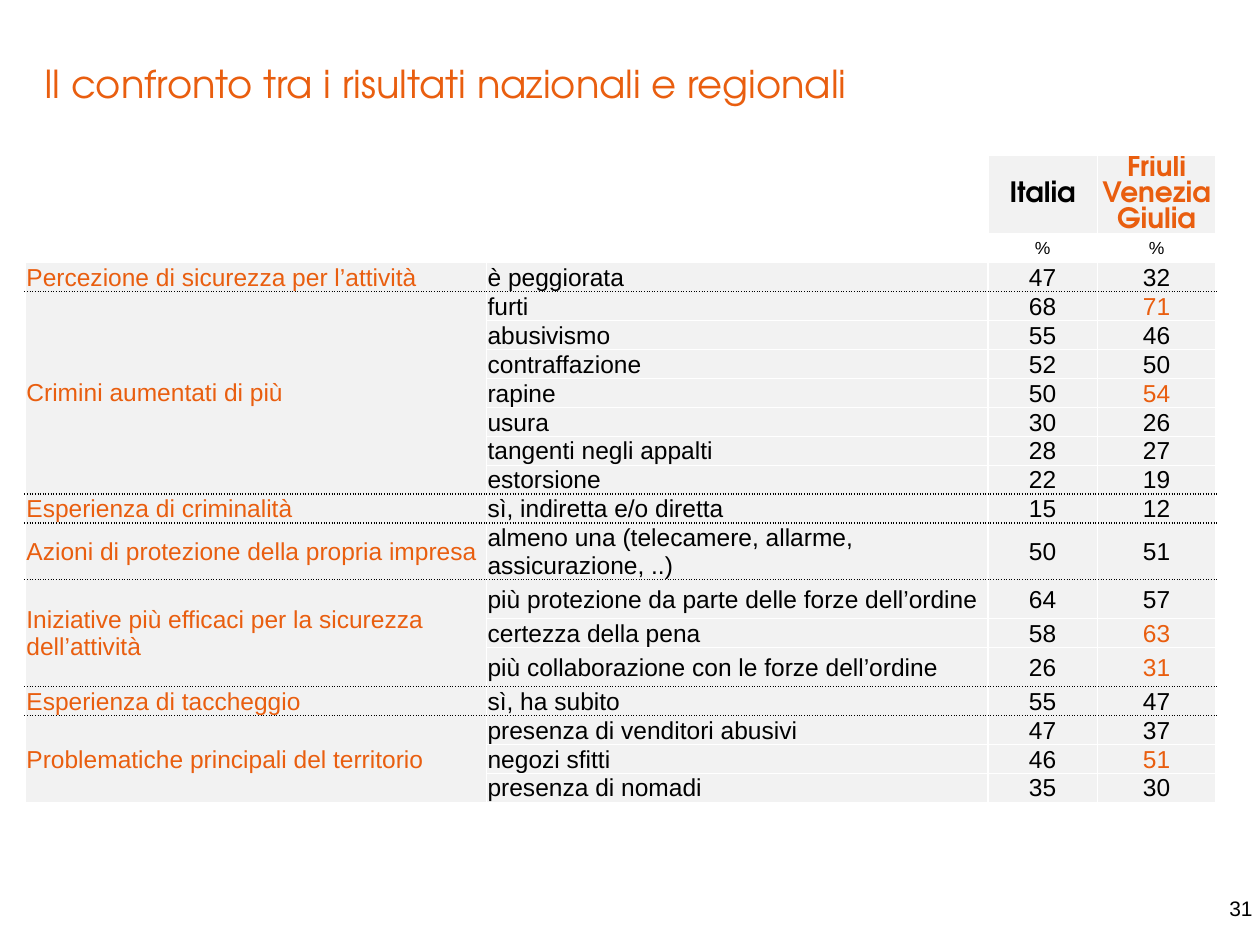
from lxml import etree
from pptx import Presentation
from pptx import util as u
from pptx.dml.color import RGBColor
from pptx.enum import text
from pptx.oxml.ns import qn

COLORS = {"orange": "E95E0F", "black": "000000", "white": "FFFFFF", "grey": "F2F2F2"}
DISPLAY, BODY = "TeX Gyre Adventor", "Arial"
GRID_COLUMNS, GRID_ROWS = 100, 75
LEAD_TO_HIGHLIGHT = 3
COLUMN_WIDTHS = (36.6, 39.8, 8.7, 9.4)
HEADER_HEIGHT, UNIT_HEIGHT = 4, 1.4

GROUPS = [
    ("Percezione di sicurezza per l’attività", [("è peggiorata", 47, 32, 2.3)]),
    ("Crimini aumentati di più", [
        ("furti", 68, 71, 2.3),
        ("abusivismo", 55, 46, 2.3),
        ("contraffazione", 52, 50, 2.3),
        ("rapine", 50, 54, 2.3),
        ("usura", 30, 26, 2.3),
        ("tangenti negli appalti", 28, 27, 2.1),
        ("estorsione", 22, 19, 2.1),
    ]),
    ("Esperienza di criminalità", [("sì, indiretta e/o diretta", 15, 12, 2.3)]),
    ("Azioni di protezione della propria impresa", [
        ("almeno una (telecamere, allarme, assicurazione, ..)", 50, 51, 3.3),
    ]),
    ("Iniziative più efficaci per la sicurezza dell’attività", [
        ("più protezione da parte delle forze dell’ordine", 64, 57, 3.1),
        ("certezza della pena", 58, 63, 2.3),
        ("più collaborazione con le forze dell’ordine", 26, 31, 3.1),
    ]),
    ("Esperienza di taccheggio", [("sì, ha subito", 55, 47, 2.3)]),
    ("Problematiche principali del territorio", [
        ("presenza di venditori abusivi", 47, 37, 2.3),
        ("negozi sfitti", 46, 51, 2.3),
        ("presenza di nomadi", 35, 30, 2.3),
    ]),
]


class SlideBuilder:
    def __init__(self, presentation):
        self.column = presentation.slide_width / GRID_COLUMNS
        self.row = presentation.slide_height / GRID_ROWS
        self.slide = presentation.slides.add_slide(presentation.slide_layouts[5])

    def area(self, left, top, width, height):
        return (round(left * self.column), round(top * self.row),
                round(width * self.column), round(height * self.row))

    def style(self, paragraph, size, color="black", font=BODY, bold=False, align="LEFT"):
        paragraph.alignment = getattr(text.PP_ALIGN, align)
        paragraph.font.size = u.Pt(size)
        paragraph.font.name = font
        paragraph.font.bold = bold
        paragraph.font.color.rgb = RGBColor.from_string(COLORS[color])

    def title(self, content, place):
        shape = self.slide.shapes.title
        shape.left, shape.top, shape.width, shape.height = self.area(*place)
        frame = shape.text_frame
        frame.text = content
        frame.auto_size = text.MSO_AUTO_SIZE.NONE
        frame.vertical_anchor = text.MSO_ANCHOR.BOTTOM
        frame.margin_left = frame.margin_top = frame.margin_right = frame.margin_bottom = 0
        self.style(frame.paragraphs[0], 22, "orange", DISPLAY)

    def page_number(self, content, place):
        frame = self.slide.shapes.add_textbox(*self.area(*place)).text_frame
        frame.word_wrap = True
        frame.vertical_anchor = text.MSO_ANCHOR.BOTTOM
        frame.text = content
        self.style(frame.paragraphs[0], 12, align="RIGHT")

    def table(self, left, top, widths, heights):
        place = self.area(left, top, sum(widths), sum(heights))
        table = self.slide.shapes.add_table(len(heights), len(widths), *place).table
        table.first_row = table.horz_banding = False
        for column, width in zip(table.columns, widths):
            column.width = round(width * self.column)
        for row, height in zip(table.rows, heights):
            row.height = round(height * self.row)
        return table

    def border(self, cell, side, dotted):
        line = etree.SubElement(cell._tc.get_or_add_tcPr(), qn(f"a:ln{side}"), w=str(u.Pt(1)))
        fill = etree.SubElement(line, qn("a:solidFill"))
        etree.SubElement(fill, qn("a:srgbClr"), val=COLORS["black" if dotted else "white"])
        etree.SubElement(line, qn("a:prstDash"), val="sysDot" if dotted else "solid")

    def cell(self, cell, content="", size=14, fill="grey", dotted="", **style):
        cell.margin_left = cell.margin_top = cell.margin_right = u.Inches(0.01)
        cell.margin_bottom = 0
        cell.vertical_anchor = text.MSO_ANCHOR.MIDDLE
        for side in "LRTB":
            self.border(cell, side, side in dotted)
        if fill:
            cell.fill.solid()
            cell.fill.fore_color.rgb = RGBColor.from_string(COLORS[fill])
        else:
            cell.fill.background()
        cell.text = str(content)
        self.style(cell.text_frame.paragraphs[0], size, **style)


def fill_header(builder, table):
    for row in range(2):
        for column in range(2):
            builder.cell(table.cell(row, column), fill=None)
    headings = [("Italia", "black"), ("Friuli Venezia Giulia", "orange")]
    for column, (heading, color) in enumerate(headings, 2):
        builder.cell(table.cell(0, column), heading, 16, color=color,
                     font=DISPLAY, bold=True, align="CENTER")
        builder.cell(table.cell(1, column), "%", 10, fill=None, align="CENTER")


def fill_groups(builder, table):
    row = 2
    for group, (topic, answers) in enumerate(GROUPS):
        first, last = row, row + len(answers) - 1
        for answer, italy, region, _ in answers:
            dotted = "T" if row == first and group > 0 else ""
            if row == last and group < len(GROUPS) - 1:
                dotted += "B"
            highlight = region - italy >= LEAD_TO_HIGHLIGHT
            topic_edges = "B" if group < len(GROUPS) - 1 else ""
            topic_edges += "T" if group else ""
            builder.cell(table.cell(row, 0), topic if row == first else "",
                         dotted=topic_edges if row == first else dotted, color="orange")
            builder.cell(table.cell(row, 1), answer, dotted=dotted)
            builder.cell(table.cell(row, 2), italy, dotted=dotted, align="CENTER")
            builder.cell(table.cell(row, 3), region, dotted=dotted, align="CENTER",
                         color="orange" if highlight else "black")
            row += 1
        if last > first:
            table.cell(first, 0).merge(table.cell(last, 0))


def main():
    presentation = Presentation()
    presentation.slide_width, presentation.slide_height = u.Inches(10), u.Inches(7.5)
    builder = SlideBuilder(presentation)
    builder.title("Il confronto tra i risultati nazionali e regionali", (3.5, 1.3, 83.5, 7.1))
    heights = [HEADER_HEIGHT, UNIT_HEIGHT]
    heights += [answer[-1] for _, answers in GROUPS for answer in answers]
    table = builder.table(2, 12.3, COLUMN_WIDTHS, heights)
    fill_header(builder, table)
    fill_groups(builder, table)
    builder.page_number("31", (68.2, 68.2, 32.2, 5.4))
    presentation.save("out.pptx")


if __name__ == "__main__":
    main()
